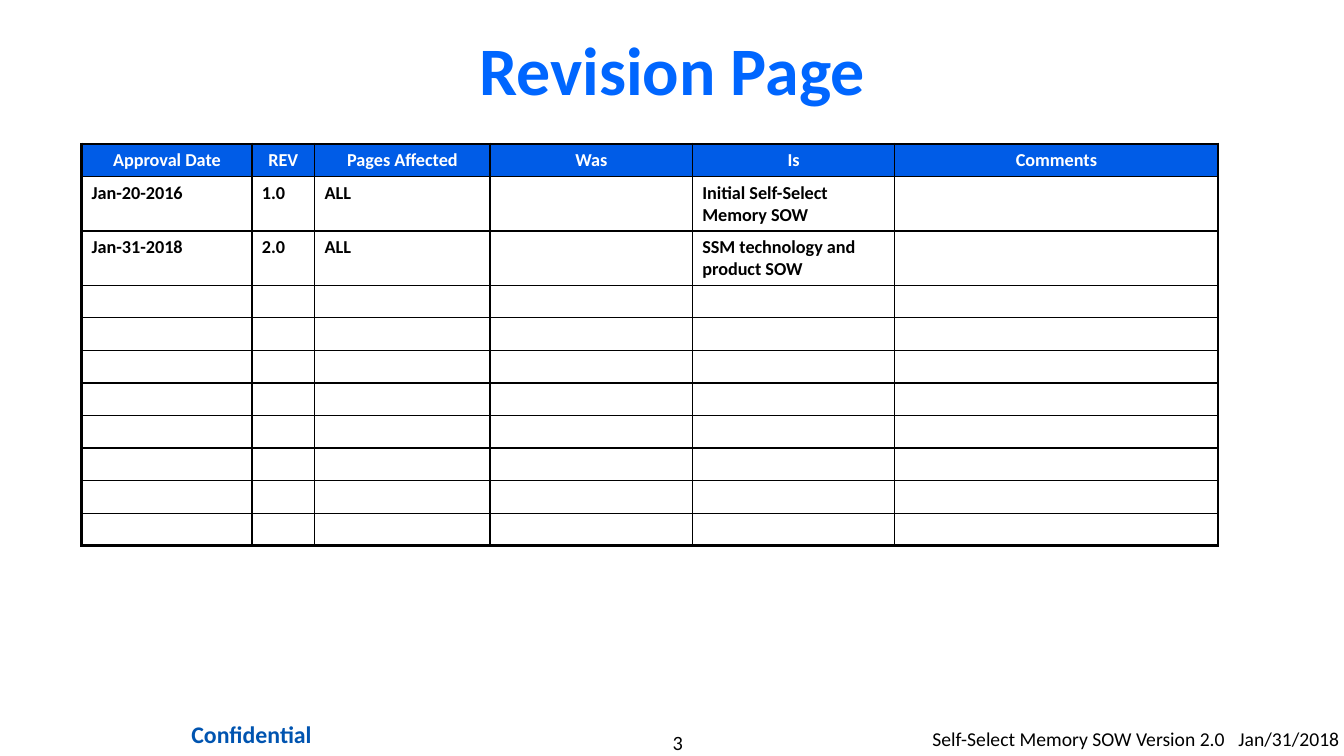
import pptx
import pptx.util
from lxml import etree
from pptx.dml.color import RGBColor
from pptx.enum.text import MSO_ANCHOR, PP_ALIGN
from pptx.oxml.ns import qn
from pptx.util import Cm, Pt

BLACK = RGBColor(0x00, 0x00, 0x00)
WHITE = RGBColor(0xFF, 0xFF, 0xFF)
TITLE_BLUE = RGBColor(0x00, 0x66, 0xFF)
HEADER_BLUE = RGBColor(0x00, 0x5C, 0xE7)
CONFIDENTIAL_BLUE = RGBColor(0x00, 0x54, 0xB0)
FONT = "Calibri"
CENTER, LEFT = PP_ALIGN.CENTER, PP_ALIGN.LEFT

HEADINGS = ["Approval Date", "REV", "Pages Affected", "Was", "Is", "Comments"]
REVISIONS = [
    ["Jan-20-2016", "1.0", "ALL", "", "Initial Self-Select Memory SOW", ""],
    ["Jan-31-2018", "2.0", "ALL", "", "SSM technology and product SOW", ""],
]
EMPTY_ROWS = 8
COLUMN_WIDTHS = [4.29, 1.58, 4.42, 5.1, 5.1, 8.15]
TABLE_LEFT, TABLE_TOP = 2.06, 3.63
LINE_ROW, DOUBLE_ROW = 0.82, 1.37
CELL_SIZE = 13
THIN, THICK = 1, 2.25
DATE_TAB = 7.71

# text, (left, top, width, height), (side inset, top inset), alignment, anchor, font
TEXTS = [
    ("Revision Page", (5.51, 0.76, 22.86, 1.9), (0.25, 0.13), CENTER, MSO_ANCHOR.MIDDLE,
     {"size": Pt(48.5), "bold": True, "color": TITLE_BLUE}),
    ("Confidential", (3.94, 17.98, 4.8, 1.04), (0.3, 0.15), CENTER, MSO_ANCHOR.TOP,
     {"size": Pt(17), "bold": True, "color": CONFIDENTIAL_BLUE}),
    ("3", (14.12, 18.39, 5.92, 0.61), (0, 0), CENTER, MSO_ANCHOR.TOP,
     {"size": Pt(14.5), "color": BLACK}),
    ("Self-Select Memory SOW Version 2.0\tJan/31/2018", (23.5, 18.19, 10.36, 0.86),
     (0, 0.13), LEFT, MSO_ANCHOR.TOP, {"size": Pt(14), "color": BLACK}),
]


def style(font, values):
    for name, value in {"name": FONT, **values}.items():
        if name == "color":
            font.color.rgb = value
        else:
            setattr(font, name, value)


def add_text(slide, text, place, insets, alignment, anchor, font):
    frame = slide.shapes.add_textbox(*map(Cm, place)).text_frame
    side, top = map(Cm, insets)
    settings = {"word_wrap": True, "vertical_anchor": anchor, "margin_left": side,
                "margin_right": side, "margin_top": top, "margin_bottom": top}
    for name, value in settings.items():
        setattr(frame, name, value)
    paragraph = frame.paragraphs[0]
    paragraph.alignment = alignment
    if "\t" in text:
        tabs = etree.SubElement(paragraph._p.get_or_add_pPr(), qn("a:tabLst"))
        etree.SubElement(tabs, qn("a:tab"), pos=str(Cm(DATE_TAB)), algn="l")
    run = paragraph.add_run()
    run.text = text
    style(run.font, font)


def set_borders(cell, widths):
    """Draw the left, right, top and bottom edges, ahead of the cell fill."""
    properties = cell._tc.get_or_add_tcPr()
    for position, (edge, width) in enumerate(zip(("lnL", "lnR", "lnT", "lnB"), widths)):
        line = etree.Element(qn(f"a:{edge}"), w=str(Pt(width)))
        fill = etree.SubElement(line, qn("a:solidFill"))
        etree.SubElement(fill, qn("a:srgbClr"), val=str(BLACK))
        properties.insert(position, line)


def fill_cell(cell, text, is_header):
    if is_header:
        cell.fill.solid()
        cell.fill.fore_color.rgb = HEADER_BLUE
    else:
        cell.fill.background()
    paragraph = cell.text_frame.paragraphs[0]
    paragraph.alignment = CENTER if is_header else LEFT
    if text:
        run = paragraph.add_run()
        run.text = text
        style(run.font, {"size": Pt(CELL_SIZE), "bold": True,
                         "color": WHITE if is_header else BLACK})
    else:
        end = etree.SubElement(paragraph._p, qn("a:endParaRPr"), sz=str(CELL_SIZE * 100))
        etree.SubElement(end, qn("a:latin"), typeface=FONT)


def add_revision_table(slide):
    rows = [HEADINGS] + REVISIONS + [[""] * len(HEADINGS)] * EMPTY_ROWS
    heights = [DOUBLE_ROW if row in REVISIONS else LINE_ROW for row in rows]
    place = (TABLE_LEFT, TABLE_TOP, sum(COLUMN_WIDTHS), sum(heights))
    table = slide.shapes.add_table(len(rows), len(HEADINGS), *map(Cm, place)).table
    table.horz_banding = False
    for column, width in zip(table.columns, COLUMN_WIDTHS):
        column.width = Cm(width)
    last_row, last_column = len(rows) - 1, len(HEADINGS) - 1
    for r, (row, height) in enumerate(zip(rows, heights)):
        table.rows[r].height = Cm(height)
        for c, text in enumerate(row):
            cell = table.cell(r, c)
            insets = {"margin_left": 0.25, "margin_right": 0.25,
                      "margin_top": 0.13, "margin_bottom": 0.13}
            for name, value in insets.items():
                setattr(cell, name, Cm(value))
            fill_cell(cell, text, r == 0)
            outer = (c == 0, c == last_column, r == 0, r == last_row)
            set_borders(cell, [THICK if edge else THIN for edge in outer])


def main():
    deck = pptx.Presentation()
    deck.slide_width, deck.slide_height = Cm(33.87), Cm(19.05)
    slide = deck.slides.add_slide(deck.slide_layouts[6])
    for item in TEXTS:
        add_text(slide, *item)
    add_revision_table(slide)
    deck.save("out.pptx")


if __name__ == "__main__":
    main()
